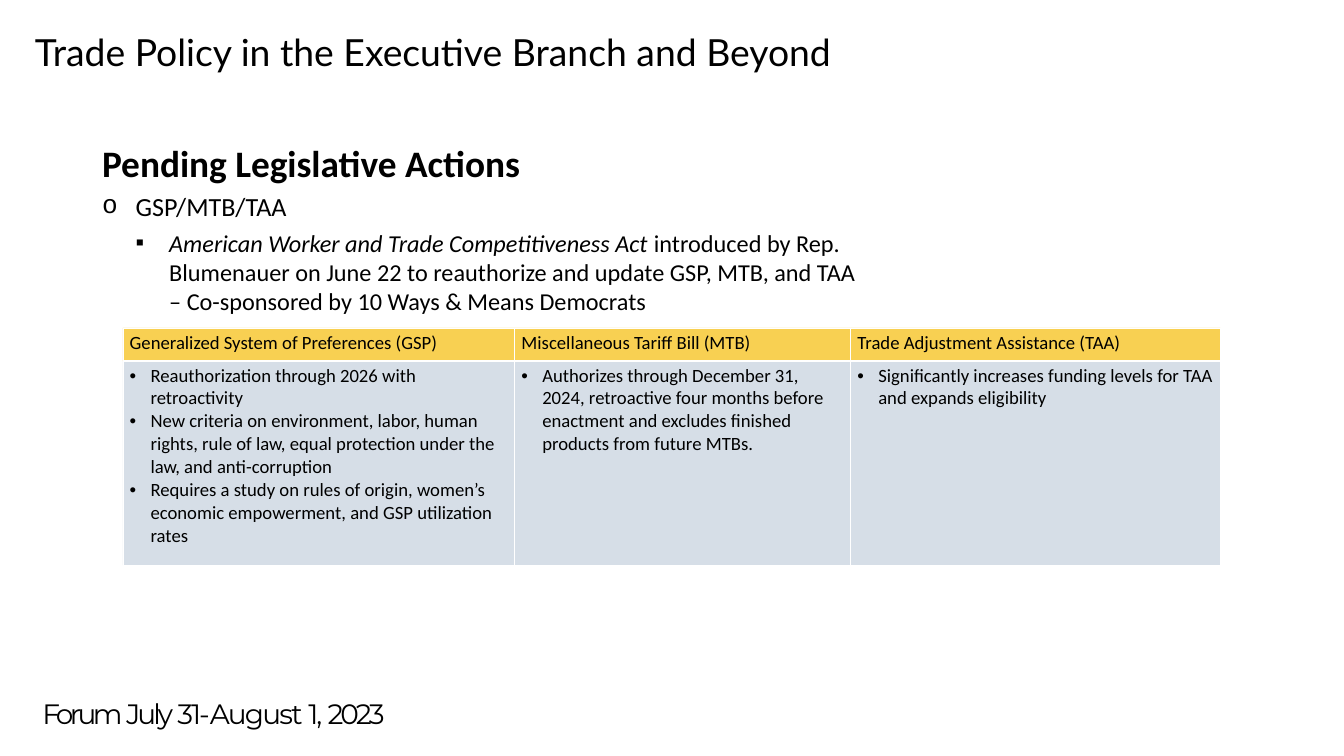
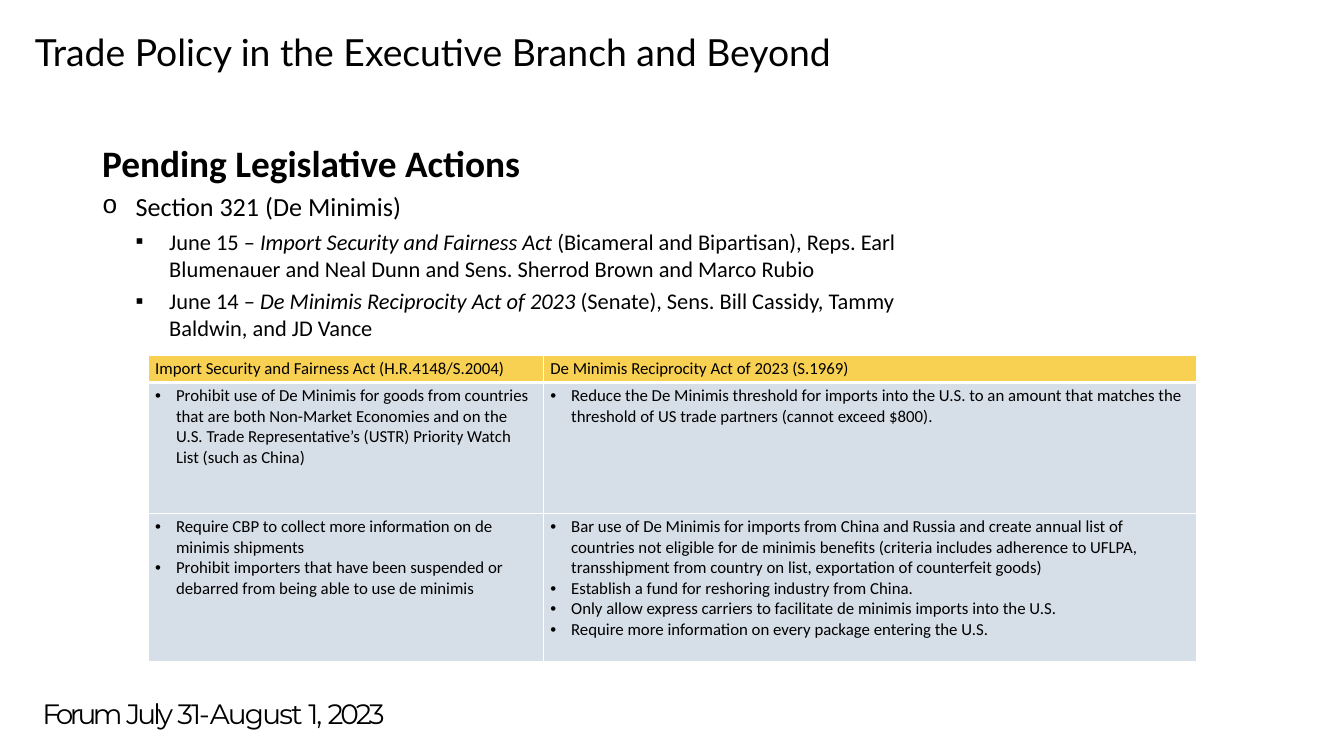
"""Build two slides on pending trade legislation, each with an outline and a table."""
import pptx
import pptx.dml.color
import pptx.enum.text
import pptx.oxml
import pptx.oxml.ns
import pptx.util
from lxml import etree

Inches = pptx.util.Inches
Pt = pptx.util.Pt
qn = pptx.oxml.ns.qn

BLACK, WHITE, GOLD, NAVY = "000000", "FFFFFF", "F6BB00", "1F497D"
TITLE = "Trade Policy in the Executive Branch and Beyond"
HEADING = "Pending Legislative Actions"
FOOTER = [("Forum ", -3.8), ("July ", -3.2), ("31-", -2.2),
          ("August ", -1.9), ("1, ", -2.2), ("2023", -3.2)]
BULLET_FONTS = {"o": "Courier New", "▪": "Arial", "•": "Arial"}

SLIDES = [
    {
        "outline_width": 11.5, "outline_height": 4.76, "act_size": 26,
        "topic": "GSP/MTB/TAA",
        "acts": [
            "*American Worker and Trade Competitiveness Act* introduced by Rep. Blumenauer on "
            "June 22 to reauthorize and update GSP, MTB, and TAA – Co-sponsored by 10 Ways & "
            "Means Democrats",
        ],
        "left": 1.83, "top": 4.88, "table_size": 20,
        "columns": [5.83, 5, 5.5], "rows": [0.49, 3.04],
        "header": ["Generalized System of Preferences (GSP)",
                   "Miscellaneous Tariff Bill (MTB)",
                   "Trade Adjustment Assistance (TAA)"],
        "body": [[
            ["Reauthorization through 2026 with retroactivity",
             "New criteria on environment, labor, human rights, rule of law, equal protection "
             "under the law, and anti-corruption",
             "Requires a study on rules of origin, women’s economic empowerment, and GSP "
             "utilization rates"],
            ["Authorizes through December 31, 2024, retroactive four months before enactment "
             "and excludes finished products from future MTBs."],
            ["Significantly increases funding levels for TAA and expands eligibility"],
        ]],
    },
    {
        "outline_width": 13.08, "outline_height": 3.25, "act_size": 24,
        "topic": "Section 321 (De Minimis)",
        "acts": [
            "June 15 – *Import Security and Fairness Act *(Bicameral and Bipartisan), Reps. Earl "
            "Blumenauer and Neal Dunn and Sens. Sherrod Brown and Marco Rubio",
            "June 14 – *De Minimis Reciprocity Act of 2023 *(Senate), Sens. Bill Cassidy, Tammy "
            "Baldwin, and JD Vance",
        ],
        "left": 2.21, "top": 5.29, "table_size": 18,
        "columns": [5.88, 9.71], "rows": [0.4, 1.95, 2.2],
        "header": ["Import Security and Fairness Act (H.R.4148/S.2004)",
                   "De Minimis Reciprocity Act of 2023 (S.1969)"],
        "body": [
            [["Prohibit use of De Minimis for goods from countries that are both Non-Market "
              "Economies and on the U.S. Trade Representative’s (USTR) Priority Watch List "
              "(such as China)"],
             ["Reduce the De Minimis threshold for imports into the U.S. to an amount that "
              "matches the threshold of US trade partners (cannot exceed $800)."]],
            [["Require CBP to collect more information on de minimis shipments",
              "Prohibit importers that have been suspended or debarred from being able to use "
              "de minimis"],
             ["Bar use of De Minimis for imports from China and Russia and create annual list "
              "of countries not eligible for de minimis benefits (criteria includes adherence "
              "to UFLPA, transshipment from country on list, exportation of counterfeit goods)",
              "Establish a fund for reshoring industry from China.",
              "Only allow express carriers to facilitate de minimis imports into the U.S.",
              "Require more information on every package entering the U.S."]],
        ],
    },
]


def paint(fill, color):
    """Make a fill solid in the colour of a hex string."""
    fill.solid()
    fill.fore_color.rgb = pptx.dml.color.RGBColor.from_string(color)


def write(para, text, size, name="Calibri", bold=False, bullet=None, margin=0, hang=0):
    """Add text to a paragraph, with the parts between asterisks in italics."""
    if bullet:
        properties = para._p.get_or_add_pPr()
        properties.set("marL", str(Inches(margin)))
        properties.set("indent", str(-Inches(hang)))
        etree.SubElement(properties, qn("a:buFont"), typeface=BULLET_FONTS[bullet])
        etree.SubElement(properties, qn("a:buChar"), char=bullet)
    for index, part in enumerate(text.split("*")):
        if part:
            span = para.add_run()
            span.text = part
            values = {"size": Pt(size), "name": name, "bold": bold, "italic": index % 2 == 1}
            for key, value in values.items():
                setattr(span.font, key, value)
            paint(span.font.fill, BLACK)


deck = pptx.Presentation()
deck.slide_width, deck.slide_height = Inches(20), Inches(11.25)

for content in SLIDES:
    page = deck.slides.add_slide(deck.slide_layouts[5])
    paint(page.background.fill, WHITE)

    title = page.shapes.title
    places = {"left": 0.42, "top": 0.38, "width": 12.58, "height": 0.77}
    for key, value in places.items():
        setattr(title, key, Inches(value))
    title.text_frame.vertical_anchor = pptx.enum.text.MSO_ANCHOR.TOP
    title.text_frame.auto_size = pptx.enum.text.MSO_AUTO_SIZE.NONE
    para = title.text_frame.paragraphs[0]
    para.alignment = pptx.enum.text.PP_ALIGN.LEFT
    write(para, TITLE, 40, "Lato")

    outline = page.shapes.add_textbox(
        Inches(1.42), Inches(2.04),
        Inches(content["outline_width"]), Inches(content["outline_height"])).text_frame
    outline.word_wrap = True
    para = outline.paragraphs[0]
    para.space_after = Pt(3)
    write(para, HEADING, 40, bold=True)
    points = [(content["topic"], 28, "o", 0.5)]
    points += [(act, content["act_size"], "▪", 1) for act in content["acts"]]
    for text, size, bullet, margin in points:
        para = outline.add_paragraph()
        para.space_before = para.space_after = Pt(3)
        write(para, text, size, bullet=bullet, margin=margin, hang=0.5)

    footer = page.shapes.add_textbox(
        Inches(0.63), Inches(10.33), Inches(5.77), Inches(0.6)).text_frame
    insets = {"margin_left": 0, "margin_top": 0.04, "margin_right": 0, "margin_bottom": 0}
    for key, value in insets.items():
        setattr(footer, key, Inches(value))
    footer.word_wrap = True
    para = footer.paragraphs[0]
    for text, spacing in FOOTER:
        write(para, text, 30, "Montserrat")
        para.runs[-1].font._element.set("spc", str(round(spacing * 100)))

    columns, rows = content["columns"], content["rows"]
    table = page.shapes.add_table(
        len(rows), len(columns), Inches(content["left"]), Inches(content["top"]),
        Inches(sum(columns)), Inches(sum(rows))).table
    table.first_row = table.horz_banding = False
    for column, width in zip(table.columns, columns):
        column.width = Inches(width)
    for row, height in zip(table.rows, rows):
        row.height = Inches(height)

    grid = [[[label] for label in content["header"]]] + content["body"]
    for row_index, row in enumerate(grid):
        is_header = row_index == 0
        for column_index, lines in enumerate(row):
            cell = table.cell(row_index, column_index)
            properties = cell._tc.get_or_add_tcPr()
            for side in "LRTB":
                width = 3 if is_header and side == "B" else 1
                border = etree.SubElement(properties, qn("a:ln" + side), w=str(Pt(width)))
                solid = etree.SubElement(border, qn("a:solidFill"))
                etree.SubElement(solid, qn("a:srgbClr"), val=WHITE)
            color, opacity = (GOLD, 68) if is_header else (NAVY, 18)
            paint(cell.fill, color)
            tint = properties.find(qn("a:solidFill")).find(qn("a:srgbClr"))
            etree.SubElement(tint, qn("a:alpha"), val=str(opacity * 1000))
            for line_index, line in enumerate(lines):
                frame = cell.text_frame
                para = frame.add_paragraph() if line_index else frame.paragraphs[0]
                write(para, line, content["table_size"],
                      bullet=None if is_header else "•", margin=0.31, hang=0.31)

deck.save("out.pptx")
